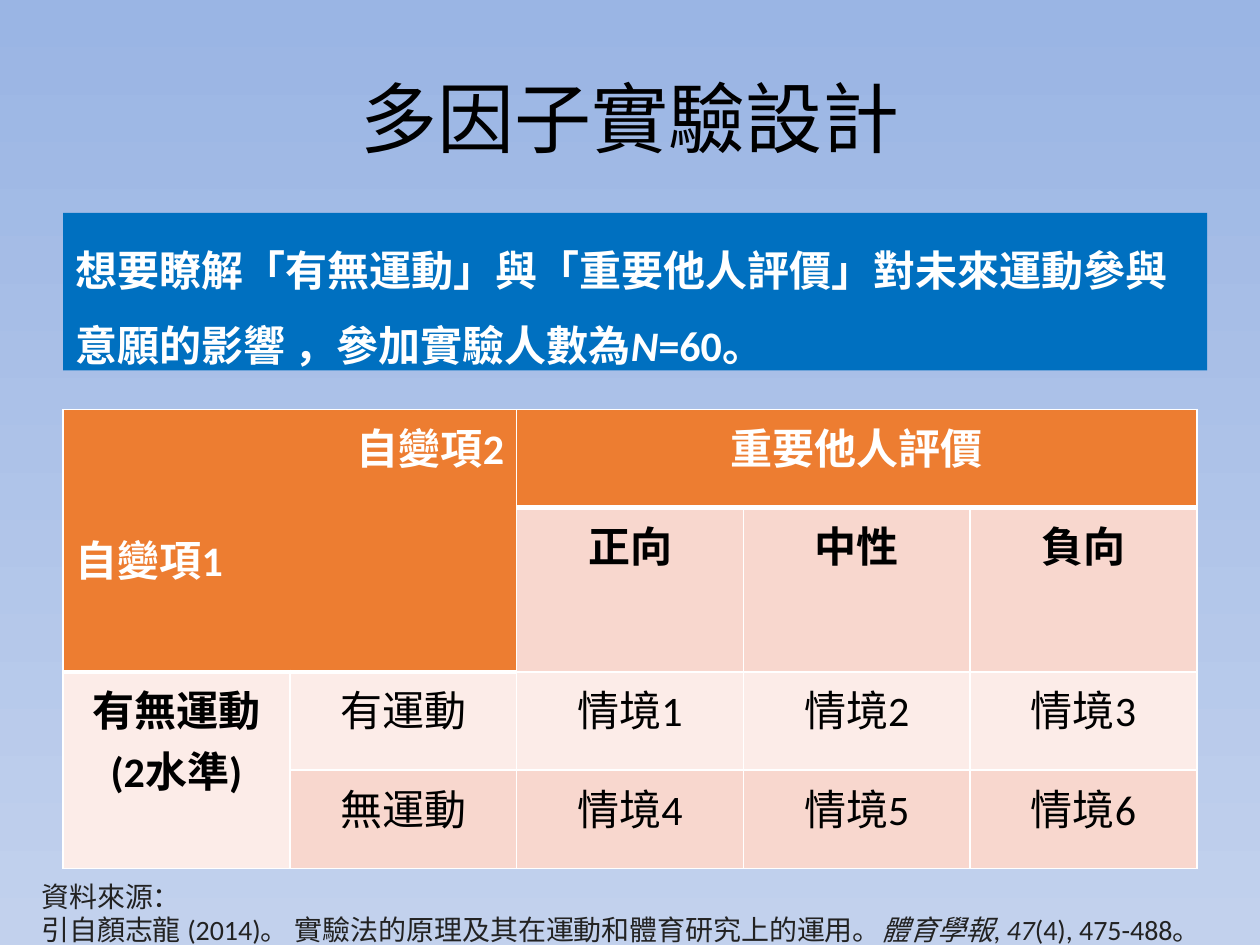
import pptx
import pptx.util
import pptx.dml.color
import pptx.enum.shapes
import pptx.enum.text
import pptx.oxml
import pptx.oxml.ns

Inches = pptx.util.Inches
Pt = pptx.util.Pt
ALIGN = pptx.enum.text.PP_ALIGN
ANCHOR = pptx.enum.text.MSO_ANCHOR

TITLE = "多因子實驗設計"
AIM = [[("想要瞭解「有無運動」與「重要他人評價」對未來運動參與意願的影響 ，參加實驗人數為", False),
        ("N", True), ("=60。", False)]]
SOURCE = [
    "資料來源：",
    [("引自顏志龍 (2014)。 實驗法的原理及其在運動和體育研究上的運用。", False),
     ("體育學報", True), (", ", False), ("47", True), ("(4), 475-488。", False)],
]
GRID = [
    [["自變項2", "自變項1"], None, ["重要他人評價"], None, None],
    [None, None, ["正向"], ["中性"], ["負向"]],
    [["有無運動", "(2水準)"], ["有運動"], ["情境1"], ["情境2"], ["情境3"]],
    [None, ["無運動"], ["情境4"], ["情境5"], ["情境6"]],
]
SPANS = [((0, 0), (1, 1)), ((0, 2), (0, 4)), ((2, 0), (3, 0))]
HEIGHTS = [0.78, 1.3, 0.78, 0.78]
FILLS = ["ED7D31", "F8D7CE", "FCECE8", "F8D7CE"]
SKY = ["9AB5E4", "C2D1ED"]


def color(code):
    return pptx.dml.color.RGBColor.from_string(code)


def paint(fill, code):
    fill.solid()
    fill.fore_color.rgb = color(code)


def write(frame, paras, size=24, code="000000", bold=False, align=None, line=None):
    frame.word_wrap = True
    for i, runs in enumerate(paras):
        para = frame.paragraphs[0] if i == 0 else frame.add_paragraph()
        para.alignment = align
        if line:
            para.line_spacing = line
        for words, slant in [(runs, False)] if isinstance(runs, str) else runs:
            run = para.add_run()
            run.text = words
            font = run.font
            font.size, font.bold, font.italic = Pt(size), bold, slant
            font.name = "Calibri"
            font.color.rgb = color(code)
            east = pptx.oxml.parse_xml(
                f'<a:ea {pptx.oxml.ns.nsdecls("a")} typeface="Noto Sans CJK SC"/>')
            font._element.find(pptx.oxml.ns.qn("a:latin")).addnext(east)


def edge(cell, base):
    for i, side in enumerate("LRTB"):
        width = Pt(base if side == "B" else 1)
        line = pptx.oxml.parse_xml(
            f'<a:ln{side} {pptx.oxml.ns.nsdecls("a")} w="{width}"><a:solidFill>'
            f'<a:srgbClr val="FFFFFF"/></a:solidFill></a:ln{side}>')
        cell._tc.get_or_add_tcPr().insert(i, line)


def fill_grid(slide):
    table = slide.shapes.add_table(
        len(GRID), len(GRID[0]), Inches(0.5), Inches(3.25),
        Inches(9), Inches(sum(HEIGHTS))).table
    for col in table.columns:
        col.width = Inches(9 / len(GRID[0]))
    for row, high in zip(table.rows, HEIGHTS):
        row.height = Inches(high)
    for (top, left), (low, right) in SPANS:
        table.cell(top, left).merge(table.cell(low, right))
    for r, row in enumerate(GRID):
        for c, paras in enumerate(row):
            cell = table.cell(r, c)
            corner = r < 2 and c < 2
            head = r == 0 or corner
            paint(cell.fill, FILLS[0] if head else FILLS[2] if c == 0 else FILLS[r])
            edge(cell, 3 if r == 0 or corner else 1)
            if paras:
                write(cell.text_frame, paras, code="FFFFFF" if head else "000000",
                      bold=r < 2 or c == 0, align=ALIGN.CENTER)
    first, second = table.cell(0, 0).text_frame.paragraphs
    first.alignment, second.alignment = ALIGN.RIGHT, ALIGN.LEFT
    second.space_before = Pt(29)


def main():
    deck = pptx.Presentation()
    deck.slide_width, deck.slide_height = Inches(10), Inches(7.5)
    slide = deck.slides.add_slide(deck.slide_layouts[5])
    back = slide.background.fill
    back.gradient()
    back.gradient_angle = 270
    for stop, code in zip(back.gradient_stops, SKY):
        stop.color.rgb = color(code)

    title = slide.shapes.title
    title.left, title.top = Inches(0.5), Inches(0.3)
    title.width, title.height = Inches(9), Inches(1.25)
    title.text_frame.vertical_anchor = ANCHOR.MIDDLE
    write(title.text_frame, [TITLE], size=44, align=ALIGN.CENTER)

    note = slide.shapes.add_textbox(Inches(0.23), Inches(6.93), Inches(10.02), Inches(0.64))
    write(note.text_frame, SOURCE, size=16, code="222222")

    fill_grid(slide)

    aim = slide.shapes.add_shape(
        pptx.enum.shapes.MSO_SHAPE.RECTANGLE,
        Inches(0.5), Inches(1.69), Inches(9.08), Inches(1.25))
    aim.shadow.inherit = False
    paint(aim.fill, "0070C0")
    aim.line.fill.background()
    aim.text_frame.vertical_anchor = ANCHOR.TOP
    write(aim.text_frame, AIM, code="FFFFFF", bold=True, align=ALIGN.LEFT, line=1.5)

    deck.save("out.pptx")


if __name__ == "__main__":
    main()
